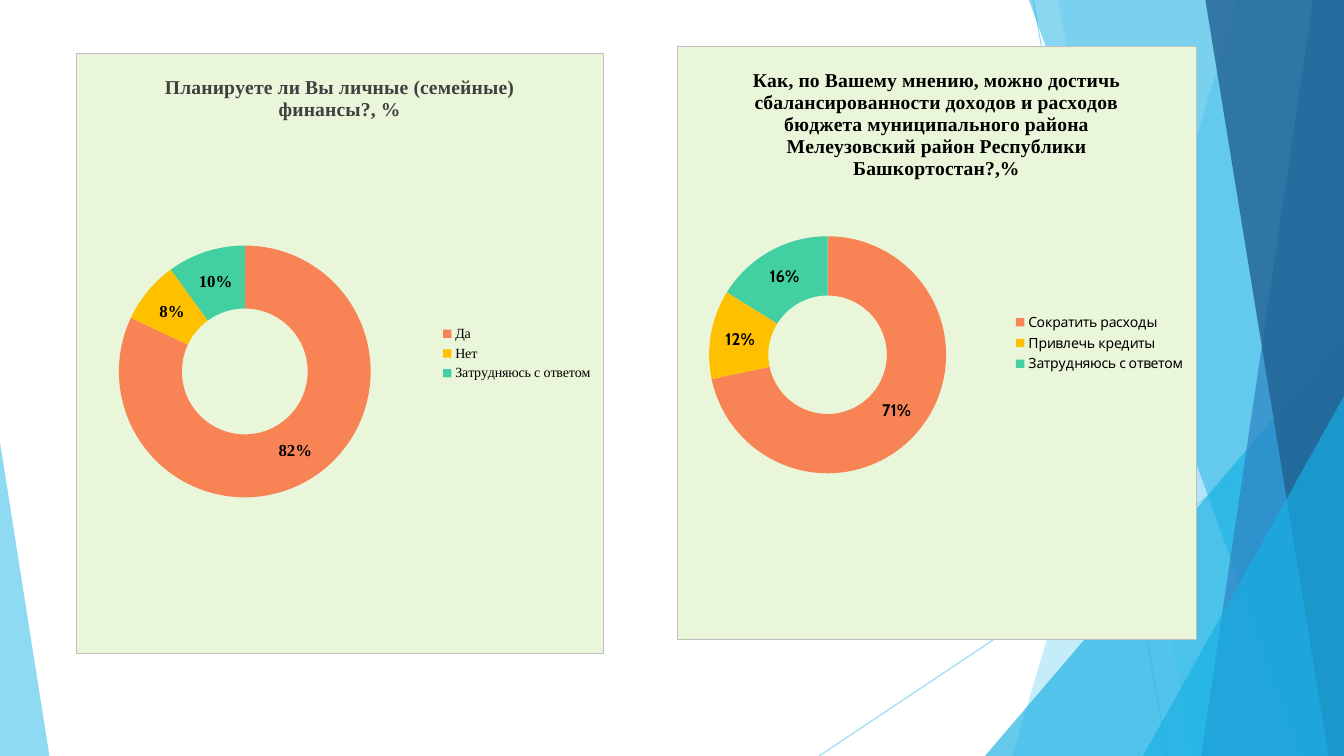
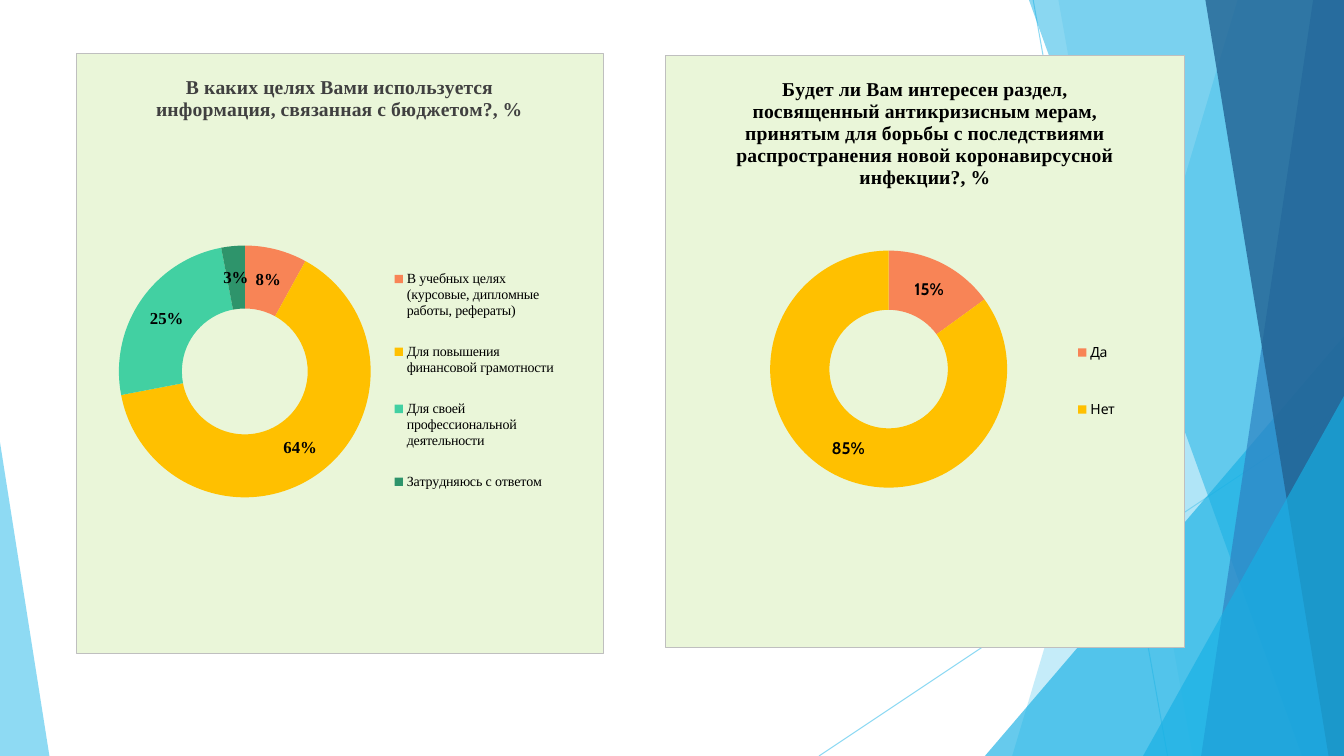
from lxml import etree
from pptx import Presentation
from pptx.chart.data import CategoryChartData
from pptx.dml.color import RGBColor
from pptx.enum.chart import XL_CHART_TYPE, XL_LEGEND_POSITION
from pptx.enum.shapes import MSO_CONNECTOR, MSO_SHAPE
from pptx.oxml import parse_xml
from pptx.oxml.ns import nsdecls, qn
from pptx.util import Pt

DOUGHNUT = XL_CHART_TYPE.DOUGHNUT
LEGEND_RIGHT = XL_LEGEND_POSITION.RIGHT
STRAIGHT = MSO_CONNECTOR.STRAIGHT
TRIANGLE = MSO_SHAPE.ISOSCELES_TRIANGLE

WIDTH, HEIGHT = 960, 540
SERIF, SANS = "Times New Roman", "Cabin"
BLACK, GREY = "000000", "404040"
PANEL_FILL, PANEL_BORDER = "EAF6D9", "BFBFBF"
SLICES = ["F88456", "FFC000", "42D0A2", "2E946B"]
SKY, CYAN, BLUE, NAVY = "5FCBEF", "17B0E4", "2E83C3", "226292"

# Backdrop, back to front
RAYS = [(738, 0, 834, 540), (960, 290, 585, 540)]
FACETS = [
    # band: left edge at the top and at the bottom, colour, opacity
    ("band", (884, 723), SKY, 36),
    ("band", (756, 852), SKY, 20),
    # triangle: left, top, width, apex, colour, opacity
    ("triangle", (703.5, 240, 256.5, 1), CYAN, 66),
    ("band", (735, 930), CYAN, 50),
    ("band", (938, 858), BLUE, 70),
    ("band", (861, 949), NAVY, 80),
    ("triangle", (816.5, 283, 143.5, 1), CYAN, 66),
    ("triangle", (0, 316, 35.3, 0), SKY, 70),
]

# Styles of the two chart panels on each slide
LEFT = {"font": SERIF, "title_color": GREY, "size": (377.3, 429)}
RIGHT = {"font": SANS, "title_color": BLACK, "size": (371.5, 424)}

SLIDES = [
    [
        {"style": LEFT, "at": (54, 38),
         "title": "Планируете ли Вы личные (семейные) финансы?, %",
         "answers": [("Да", 82), ("Нет", 8), ("Затрудняюсь с ответом", 10)],
         "plot": (0.08, 0.32, 0.48, 0.42)},
        {"style": RIGHT, "at": (483.3, 33),
         "title": "Как, по Вашему мнению, можно достичь сбалансированности "
                  "доходов и расходов бюджета муниципального района "
                  "Мелеузовский район Республики Башкортостан?,%",
         "answers": [("Сократить расходы", 71), ("Привлечь кредиты", 12),
                     ("Затрудняюсь с ответом", 16)],
         "plot": (0.06, 0.32, 0.46, 0.4)},
    ],
    [
        {"style": LEFT, "at": (54, 38),
         "title": "В каких целях Вами используется информация, "
                  "связанная с бюджетом?, %",
         "answers": [
             ("В учебных целях (курсовые, дипломные работы, рефераты)", 8),
             ("Для повышения финансовой грамотности", 64),
             ("Для своей профессиональной деятельности", 25),
             ("Затрудняюсь с ответом", 3)],
         "plot": (0.08, 0.32, 0.48, 0.42),
         "legend": (0.59, 0.32, 0.33, 0.45)},
        {"style": RIGHT, "at": (475, 39),
         "title": "Будет ли Вам интересен раздел, посвященный антикризисным "
                  "мерам, принятым для борьбы с последствиями распространения "
                  "новой коронавирсусной инфекции?, %",
         "answers": [("Да", 15), ("Нет", 85)],
         "plot": (0.2, 0.33, 0.46, 0.4),
         "legend": (0.77, 0.42, 0.12, 0.26)},
    ],
]


def color(value):
    return RGBColor.from_string(value)


def format_font(font, style):
    for name, value in style.items():
        if name == "color":
            font.color.rgb = color(value)
        else:
            setattr(font, name, value)


def set_opacity(shape, percent):
    for tone in shape.element.spPr.iter(qn("a:srgbClr")):
        alpha = etree.SubElement(tone, qn("a:alpha"))
        alpha.set("val", str(percent * 1000))


def add_ray(page, ends):
    ray = page.shapes.add_connector(STRAIGHT, *map(Pt, ends))
    ray.line.color.rgb = color(SKY)
    ray.line.width = Pt(0.75)
    set_opacity(ray, 70)
    etree.SubElement(ray.element.spPr, qn("a:effectLst"))
    return ray


def add_facet(page, kind, geometry, tone, opacity):
    if kind == "band":
        top, bottom = geometry
        outline = page.shapes.build_freeform(Pt(top), 0)
        corners = [(WIDTH, 0), (WIDTH, HEIGHT), (bottom, HEIGHT)]
        outline.add_line_segments([(Pt(x), Pt(y)) for x, y in corners])
        facet = outline.convert_to_shape()
    else:
        left, top, width, apex = geometry
        facet = page.shapes.add_shape(
            TRIANGLE, Pt(left), Pt(top), Pt(width), Pt(HEIGHT - top))
        facet.adjustments[0] = apex
    facet.fill.solid()
    facet.fill.fore_color.rgb = color(tone)
    facet.line.fill.background()
    facet.shadow.inherit = False
    set_opacity(facet, opacity)
    return facet


def move_to_master(master, shapes):
    """Put the backdrop behind the placeholders, so every slide inherits it."""
    tree = master.shapes.element
    for index, shape in enumerate(shapes):
        shape.element.xpath(".//p:cNvPr")[0].set("id", str(100 + index))
        tree.insert(2 + index, shape.element)


def place(part, area, inner=False):
    """Give a plot area or legend a fixed place, as fractions of the chart."""
    for old in part.findall(qn("c:layout")):
        part.remove(old)
    target = '<c:layoutTarget val="inner"/>' if inner else ""
    modes = '<c:xMode val="edge"/><c:yMode val="edge"/>'
    sizes = "".join(f'<c:{name} val="{value}"/>' for name, value in zip("xywh", area))
    layout = parse_xml(
        f'<c:layout {nsdecls("c")}><c:manualLayout>{target}{modes}{sizes}'
        "</c:manualLayout></c:layout>")
    if inner:
        part.insert(0, layout)
    else:
        part.find(qn("c:legendPos")).addnext(layout)


def add_doughnut(page, panel):
    style = panel["style"]
    data = CategoryChartData()
    data.categories = [answer for answer, share in panel["answers"]]
    data.add_series("Series 1", [share for answer, share in panel["answers"]])
    box = (*panel["at"], *style["size"])
    chart = page.shapes.add_chart(DOUGHNUT, *map(Pt, box), data).chart
    base = {"name": style["font"], "size": Pt(10), "color": BLACK}
    format_font(chart.font, base)

    # Title
    chart.has_title = True
    frame = chart.chart_title.text_frame
    frame.text = panel["title"]
    format_font(frame.paragraphs[0].runs[0].font,
                {"name": SERIF, "size": Pt(14), "bold": True,
                 "color": style["title_color"]})

    # Legend
    chart.has_legend = True
    chart.legend.position = LEGEND_RIGHT
    chart.legend.include_in_layout = False
    format_font(chart.legend.font, base)

    # Slices and labels
    plot = chart.plots[0]
    plot.vary_by_categories = True
    for index in range(len(panel["answers"])):
        fill = plot.series[0].points[index].format.fill
        fill.solid()
        fill.fore_color.rgb = color(SLICES[index])
    plot.has_data_labels = True
    labels = plot.data_labels
    labels.show_value = True
    labels.show_percentage = False
    labels.number_format = '0"%"'
    labels.number_format_is_linked = False
    format_font(labels.font, {**base, "size": Pt(12), "bold": True})

    # Panel and layout
    body = chart.element.find(qn("c:chart"))
    place(body.find(qn("c:plotArea")), panel["plot"], inner=True)
    if "legend" in panel:
        place(body.find(qn("c:legend")), panel["legend"])
    body.addnext(parse_xml(
        f'<c:spPr {nsdecls("c", "a")}>'
        f'<a:solidFill><a:srgbClr val="{PANEL_FILL}"/></a:solidFill>'
        f'<a:ln w="{Pt(0.75)}"><a:solidFill><a:srgbClr val="{PANEL_BORDER}"/>'
        "</a:solidFill></a:ln></c:spPr>"))


def main():
    deck = Presentation()
    deck.slide_width, deck.slide_height = Pt(WIDTH), Pt(HEIGHT)
    blank = deck.slide_layouts[6]
    pages = [deck.slides.add_slide(blank) for panels in SLIDES]
    backdrop = [add_ray(pages[0], ends) for ends in RAYS]
    backdrop += [add_facet(pages[0], *facet) for facet in FACETS]
    move_to_master(deck.slide_master, backdrop)
    for page, panels in zip(pages, SLIDES):
        for panel in panels:
            add_doughnut(page, panel)
    deck.save("out.pptx")


if __name__ == "__main__":
    main()
